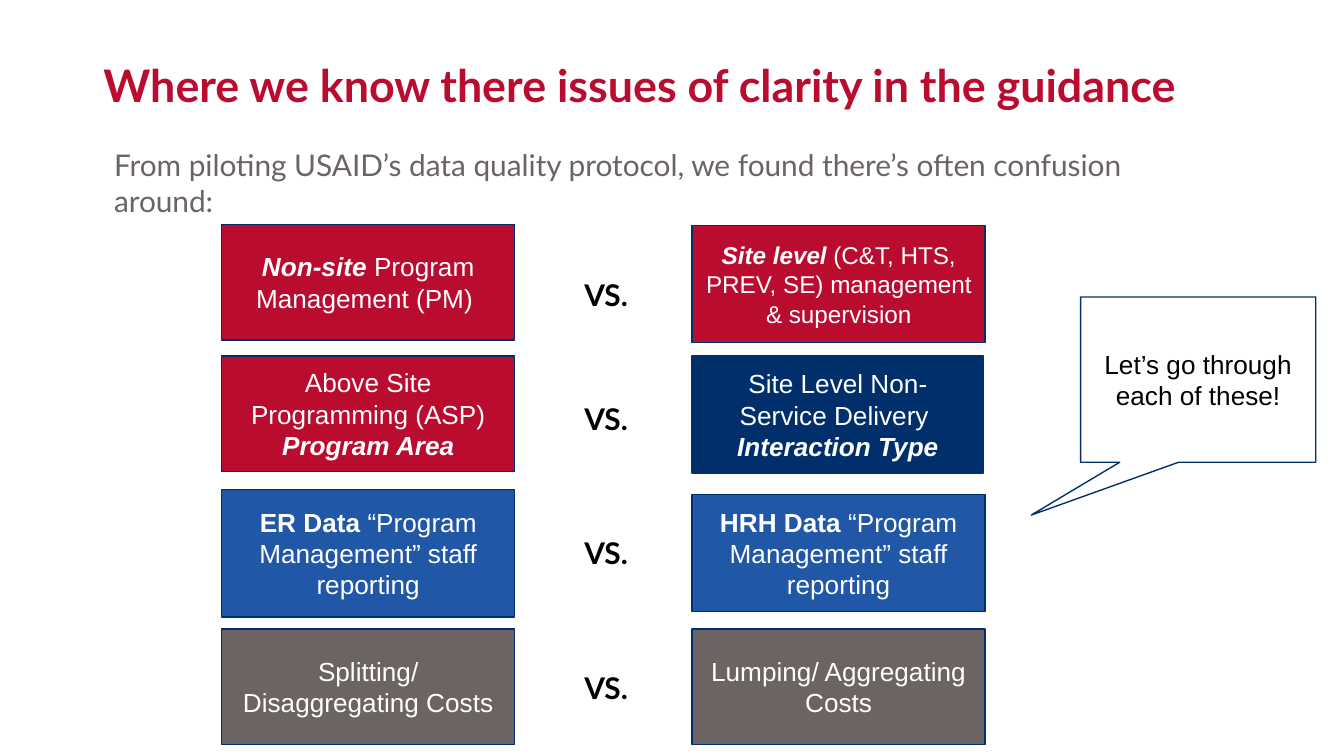
import pptx
import pptx.util
import pptx.dml.color
import pptx.enum.shapes
import pptx.enum.text

Inches = pptx.util.Inches
Pt = pptx.util.Pt
RGBColor = pptx.dml.color.RGBColor
MSO_SHAPE = pptx.enum.shapes.MSO_SHAPE
PP_ALIGN = pptx.enum.text.PP_ALIGN
MSO_ANCHOR = pptx.enum.text.MSO_ANCHOR

RED = RGBColor(0xBA, 0x0C, 0x2F)
NAVY = RGBColor(0x00, 0x2F, 0x6C)
BLUE = RGBColor(0x20, 0x57, 0xA7)
GREY = RGBColor(0x6C, 0x64, 0x63)
WHITE = RGBColor(0xFF, 0xFF, 0xFF)
BLACK = RGBColor(0x00, 0x00, 0x00)


def write(shape, paragraphs, font, size, color, align, anchor):
    """Fill a shape with paragraphs of (text, style) runs; style holds "b" and/or "i"."""
    frame = shape.text_frame
    frame.word_wrap = True
    frame.auto_size = pptx.enum.text.MSO_AUTO_SIZE.NONE
    frame.vertical_anchor = anchor
    frame.margin_left = frame.margin_right = Inches(0.1)
    frame.margin_top = frame.margin_bottom = Inches(0.1)
    for number, runs in enumerate(paragraphs):
        paragraph = frame.add_paragraph() if number else frame.paragraphs[0]
        paragraph.alignment = align
        paragraph.space_before = Pt(0)
        for text, style in runs:
            run = paragraph.add_run()
            run.text = text
            run.font.name = font
            run.font.size = Pt(size)
            run.font.bold = "b" in style
            run.font.italic = "i" in style
            run.font.color.rgb = color


def add_box(preset, left, top, width, height, fill, paragraphs, size, color):
    box = slide.shapes.add_shape(
        preset, Inches(left), Inches(top), Inches(width), Inches(height))
    box.shadow.inherit = False
    box.fill.solid()
    box.fill.fore_color.rgb = fill
    box.line.color.rgb = NAVY
    box.line.width = Pt(0.75)
    write(box, paragraphs, "Arial", size, color, PP_ALIGN.CENTER, MSO_ANCHOR.MIDDLE)
    return box


deck = pptx.Presentation()
deck.slide_width = Inches(10)
deck.slide_height = Inches(10) * 9 // 16
slide = deck.slides.add_slide(deck.slide_layouts[5])

title = slide.shapes.title
title.left, title.top = Inches(0.67), Inches(0.43)
title.width, title.height = Inches(8.83), Inches(0.5)
write(title, [[("Where we know there issues of clarity in the guidance", "b")]],
      "Lato", 24, RED, PP_ALIGN.LEFT, MSO_ANCHOR.BOTTOM)

intro = slide.shapes.add_textbox(Inches(0.75), Inches(0.99), Inches(8.29), Inches(0.5))
write(intro, [[("From piloting USAID’s data quality protocol, "
                "we found there’s often confusion around:", "")]],
      "Lato", 16, GREY, PP_ALIGN.LEFT, MSO_ANCHOR.TOP)
intro.text_frame.paragraphs[0].space_after = Pt(8)

# Each side: top, width, height, fill, text size, paragraphs
staff_reporting = ("“Program Management” staff reporting", "")
comparisons = [
    (1.96,
     (1.67, 2.18, 0.86, RED, 14, [[("Non-site", "bi"),
                                   (" Program Management (PM) ", "")]]),
     (1.68, 2.18, 0.87, RED, 13, [[("Site level ", "bi"),
                                   ("(C&T, HTS, PREV, SE) management & supervision", "")]])),
    (2.88,
     (2.65, 2.18, 0.86, RED, 14, [[("Above Site Programming (ASP) ", ""),
                                   ("Program Area", "bi")]]),
     (2.65, 2.17, 0.87, NAVY, 14, [[("Site Level Non-Service Delivery ", "")],
                                   [("Interaction Type", "bi")]])),
    (3.88,
     (3.64, 2.18, 0.95, BLUE, 14, [[("ER Data ", "b"), staff_reporting]]),
     (3.68, 2.18, 0.87, BLUE, 14, [[("HRH Data ", "b"), staff_reporting]])),
    (4.88,
     (4.68, 2.18, 0.86, GREY, 14, [[("Splitting/ Disaggregating Costs", "")]]),
     (4.68, 2.18, 0.86, GREY, 14, [[("Lumping/ Aggregating Costs", "")]])),
]
for versus_top, *sides in comparisons:
    for left, (top, width, height, fill, size, paragraphs) in zip((1.65, 5.15), sides):
        add_box(MSO_SHAPE.RECTANGLE, left, top, width, height, fill,
                paragraphs, size, WHITE)
    versus = slide.shapes.add_textbox(
        Inches(4.25), Inches(versus_top), Inches(0.56), Inches(0.47))
    write(versus, [[("VS.", "b")]], "Lato", 16, BLACK, PP_ALIGN.LEFT, MSO_ANCHOR.TOP)

callout = add_box(MSO_SHAPE.ROUNDED_RECTANGULAR_CALLOUT, 8.04, 2.21, 1.75, 1.23, WHITE,
                  [[("Let’s go through each of these!", "")]], 14, BLACK)
for index, value in enumerate((-0.71, 0.82, 0)):
    callout.adjustments[index] = value

deck.save("out.pptx")
